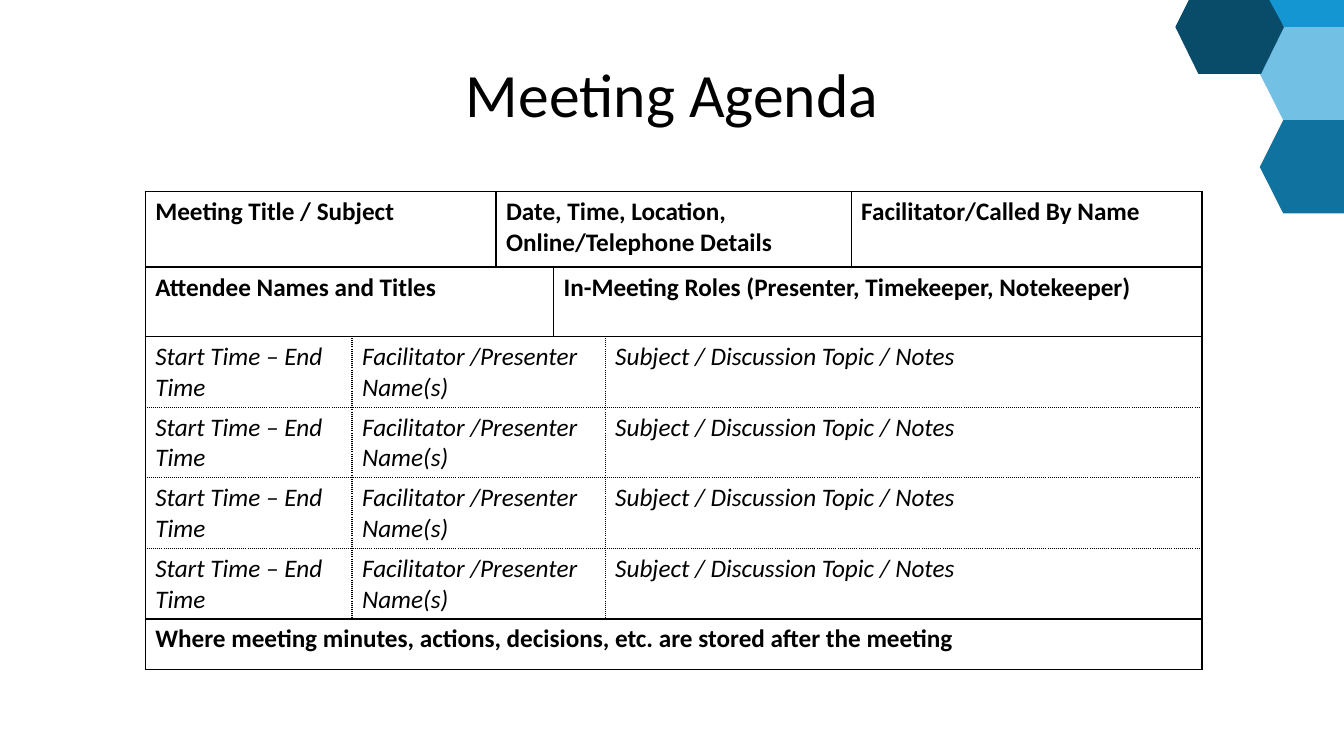
from pptx import Presentation
from pptx import util as u
from pptx.dml import color
from pptx.enum import text
from pptx.oxml import ns
from lxml import etree

FONT = "Calibri"
BLACK = "000000"
COLUMNS = [5.21, 3.63, 1.45, 1.3, 6.2, 8.84]
AGENDA = [("Start Time – End Time", 1),
          ("Facilitator /Presenter Name(s)", 3),
          ("Subject / Discussion Topic / Notes", 2)]
ROWS = [
    (1.9, False, [("Meeting Title / Subject", 2),
                  ("Date, Time, Location, Online/Telephone Details", 3),
                  ("Facilitator/Called By Name", 1)]),
    (1.75, False, [("Attendee Names and Titles", 3),
                   ("In-Meeting Roles (Presenter, Timekeeper, Notekeeper)", 3)]),
    *[(1.27, True, AGENDA)] * 4,
    (1.27, False, [("Where meeting minutes, actions, decisions, etc. "
                    "are stored after the meeting", 6)]),
]


def rgb(value):
    return color.RGBColor.from_string(value)


def write(tf, content, size=18, bold=False, italic=False, fill=BLACK,
          align=text.PP_ALIGN.LEFT):
    p = tf.paragraphs[0]
    p.alignment = align
    r = p.add_run()
    r.text = content
    r.font.name = FONT
    r.font.size = u.Pt(size)
    r.font.bold = bold
    r.font.italic = italic
    r.font.color.rgb = rgb(fill)


def add_title(s, left, top, width, height):
    sp = s.shapes.add_textbox(u.Cm(left), u.Cm(top), u.Cm(width), u.Cm(height))
    tf = sp.text_frame
    tf.word_wrap = True
    tf.vertical_anchor = text.MSO_ANCHOR.MIDDLE
    write(tf, "Meeting Agenda", size=44, align=text.PP_ALIGN.CENTER)


def add_hexagons(s, left, top, width):
    def half_hexagon(y):
        return [(2.13, y + 1.18), (2.72, y), (width, y),
                (width, y + 2.35), (2.72, y + 2.35)]

    hexagons = [
        ("72C0E3", half_hexagon(0.68)),
        ("10729E", half_hexagon(3.03)),
        ("094C6A", [(0, 0.68), (0.34, 0), (2.42, 0), (2.74, 0.68),
                    (2.16, 1.86), (0.58, 1.86)]),
        ("1396D1", [(2.37, 0), (width, 0), (width, 0.68), (2.74, 0.68)]),
    ]
    for fill, points in hexagons:
        start, *rest = [(u.Cm(left + x), u.Cm(top + y)) for x, y in points]
        builder = s.shapes.build_freeform(*start)
        builder.add_line_segments(rest, close=True)
        sp = builder.convert_to_shape()
        sp.shadow.inherit = False
        sp.fill.solid()
        sp.fill.fore_color.rgb = rgb(fill)
        sp.line.fill.background()


def set_borders(cell, dotted):
    tcPr = cell._tc.get_or_add_tcPr()
    for side in "LRTB":
        ln = etree.SubElement(tcPr, ns.qn("a:ln" + side), w=str(u.Pt(1)))
        solid = etree.SubElement(ln, ns.qn("a:solidFill"))
        etree.SubElement(solid, ns.qn("a:srgbClr"), val=BLACK)
        dash = "sysDot" if side in dotted else "solid"
        etree.SubElement(ln, ns.qn("a:prstDash"), val=dash)
    cell.fill.background()


def dotted_sides(row, first, last):
    if not ROWS[row][1]:
        return ""
    inner = {"L": first > 0, "R": last < len(COLUMNS) - 1,
             "T": ROWS[row - 1][1], "B": ROWS[row + 1][1]}
    return "".join(side for side, dotted in inner.items() if dotted)


def add_agenda(s, left, top):
    height = sum(row[0] for row in ROWS)
    table = s.shapes.add_table(len(ROWS), len(COLUMNS), u.Cm(left), u.Cm(top),
                               u.Cm(sum(COLUMNS)), u.Cm(height)).table
    table.first_row = False
    table.horz_banding = False
    for column, width in zip(table.columns, COLUMNS):
        column.width = u.Cm(width)
    for i, (row_height, is_item, entries) in enumerate(ROWS):
        table.rows[i].height = u.Cm(row_height)
        first = 0
        for content, span in entries:
            last = first + span - 1
            for j in range(first, last + 1):
                set_borders(table.cell(i, j), dotted_sides(i, first, last))
            cell = table.cell(i, first)
            if span > 1:
                cell.merge(table.cell(i, last))
            write(cell.text_frame, content, bold=not is_item, italic=is_item)
            first = last + 1


def main():
    prs = Presentation()
    prs.slide_width = u.Cm(33.87)
    prs.slide_height = u.Cm(19.05)
    s = prs.slides.add_slide(prs.slide_layouts[6])
    add_hexagons(s, 29.62, 0, 4.25)
    add_title(s, 1.7, 0.76, 30.48, 3.18)
    add_agenda(s, 3.66, 4.83)
    prs.save("out.pptx")


if __name__ == "__main__":
    main()
